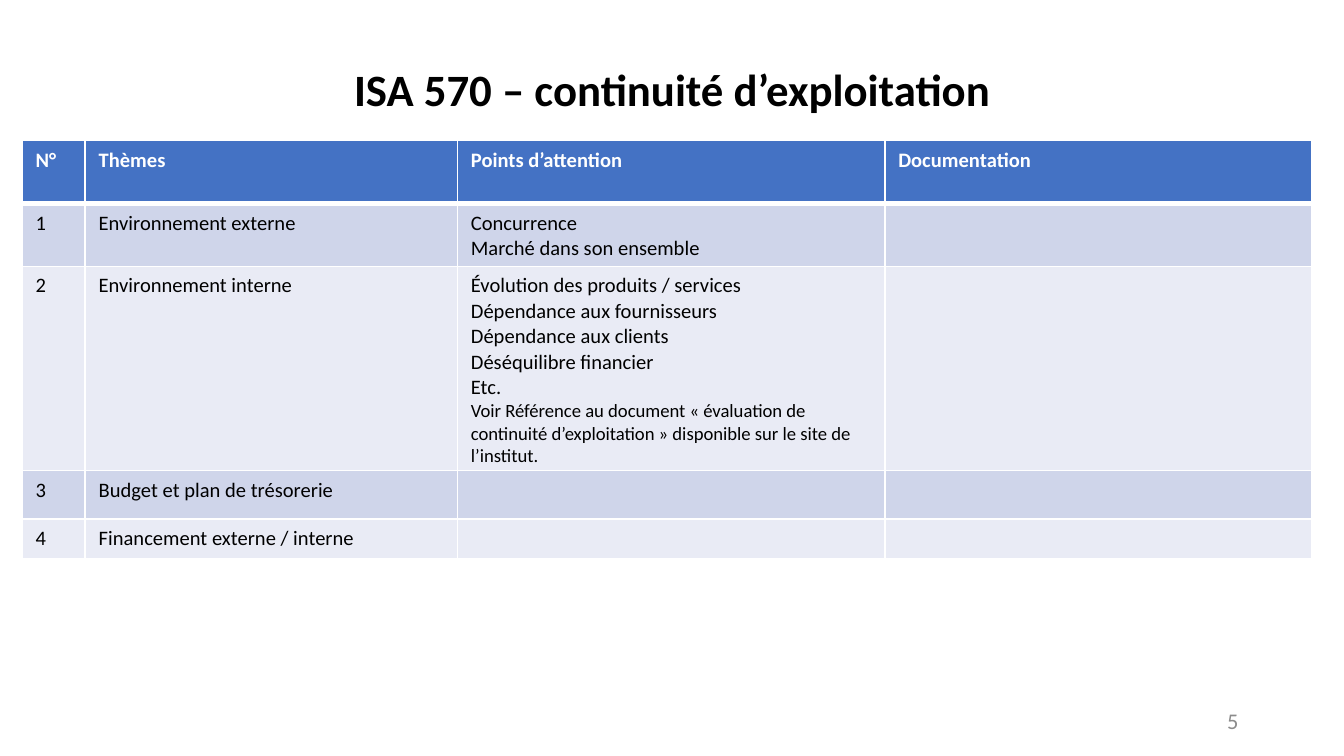
from lxml import etree
from pptx import Presentation
from pptx import util as u
from pptx.dml import color
from pptx.enum import text
from pptx.oxml import ns

WIDTH = 10
HEIGHT = WIDTH * 9 / 16
FONT = "Calibri"
WHITE, BLACK, GREY, BLUE = "FFFFFF", "000000", "8C8C8C", "4472C4"
BANDS = ["CFD5EA", "E9EBF5"]
BODY_SIZE, NOTE_SIZE = 11, 10
COLUMNS = [0.47, 2.77, 3.18, 3.18]
ROWS = [0.47, 0.45, 0.67, 0.36, 0.3]
HEADINGS = ["N°", "Thèmes", "Points d’attention", "Documentation"]
NOTE = ("Voir Référence au document « évaluation de continuité "
        "d’exploitation » disponible sur le site de l’institut.")
THEMES = [
    ("Environnement externe", ["Concurrence", "Marché dans son ensemble"]),
    ("Environnement interne", [
        "Évolution des produits / services", "Dépendance aux fournisseurs",
        "Dépendance aux clients", "Déséquilibre financier", "Etc.", NOTE]),
    ("Budget et plan de trésorerie", []),
    ("Financement externe / interne", []),
]


def rgb(value):
    return color.RGBColor.from_string(value)


def across(percent):
    return u.Inches(WIDTH * percent / 100)


def down(percent):
    return u.Inches(HEIGHT * percent / 100)


def write(para, content, size=BODY_SIZE, ink=BLACK, bold=False,
          align=text.PP_ALIGN.LEFT, spacing=None):
    para.alignment = align
    para.line_spacing = spacing
    if not content:
        para._p.get_or_add_endParaRPr().set("sz", str(size * 100))
        return
    span = para.add_run()
    span.text = content
    span.font.name = FONT
    span.font.size = u.Pt(size)
    span.font.bold = bold
    span.font.color.rgb = rgb(ink)


def add_text(page, content, left, top, width, height, **style):
    box = page.shapes.add_textbox(across(left), down(top),
                                  across(width), down(height))
    frame = box.text_frame
    frame.word_wrap = True
    frame.vertical_anchor = text.MSO_ANCHOR.MIDDLE
    write(frame.paragraphs[0], content, **style)


def add_border(cell, side, points):
    line = etree.SubElement(cell._tc.get_or_add_tcPr(), ns.qn(f"a:ln{side}"),
                            w=str(u.Pt(points)))
    fill = etree.SubElement(line, ns.qn("a:solidFill"))
    etree.SubElement(fill, ns.qn("a:srgbClr"), val=WHITE)


def fill_cell(cell, lines, shade, top=1, bottom=1, **style):
    for side, points in zip("LRTB", (1, 1, top, bottom)):
        add_border(cell, side, points)
    cell.fill.solid()
    cell.fill.fore_color.rgb = rgb(shade)
    frame = cell.text_frame
    for index, content in enumerate(lines or [""]):
        para = frame.add_paragraph() if index else frame.paragraphs[0]
        size = NOTE_SIZE if content == NOTE else BODY_SIZE
        write(para, content, size=size, **style)


def add_themes(page):
    table = page.shapes.add_table(
        len(ROWS), len(COLUMNS), across(1.64), down(18.6),
        u.Inches(sum(COLUMNS)), u.Inches(sum(ROWS))).table
    for column, width in zip(table.columns, COLUMNS):
        column.width = u.Inches(width)
    for row, height in zip(table.rows, ROWS):
        row.height = u.Inches(height)
    for index, heading in enumerate(HEADINGS):
        fill_cell(table.cell(0, index), [heading], BLUE, bottom=3,
                  ink=WHITE, bold=True)
    for number, (theme, points) in enumerate(THEMES, 1):
        for index, lines in enumerate([[str(number)], [theme], points, []]):
            fill_cell(table.cell(number, index), lines,
                      BANDS[(number - 1) % 2], top=3 if number == 1 else 1)


def main():
    deck = Presentation()
    deck.slide_width, deck.slide_height = u.Inches(WIDTH), u.Inches(HEIGHT)
    page = deck.slides.add_slide(deck.slide_layouts[6])
    add_text(page, "5", 70.63, 92.69, 22.5, 5.32, size=12, ink=GREY,
             align=text.PP_ALIGN.RIGHT)
    add_themes(page)
    add_text(page, "ISA 570 – continuité d’exploitation",
             6.88, 2.5, 86.25, 19.4, size=24, bold=True,
             align=text.PP_ALIGN.CENTER, spacing=0.9)
    deck.save("out.pptx")


if __name__ == "__main__":
    main()
